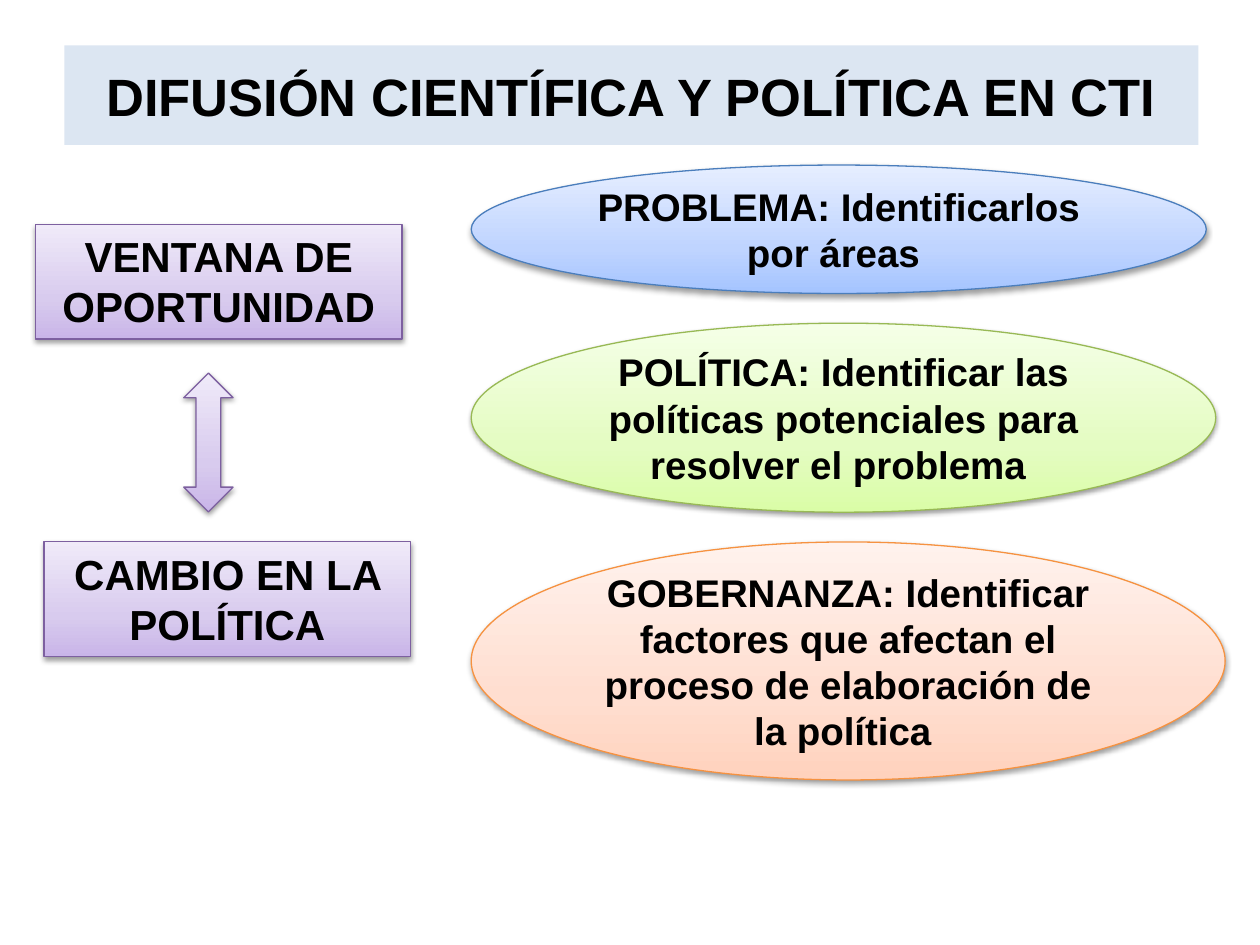
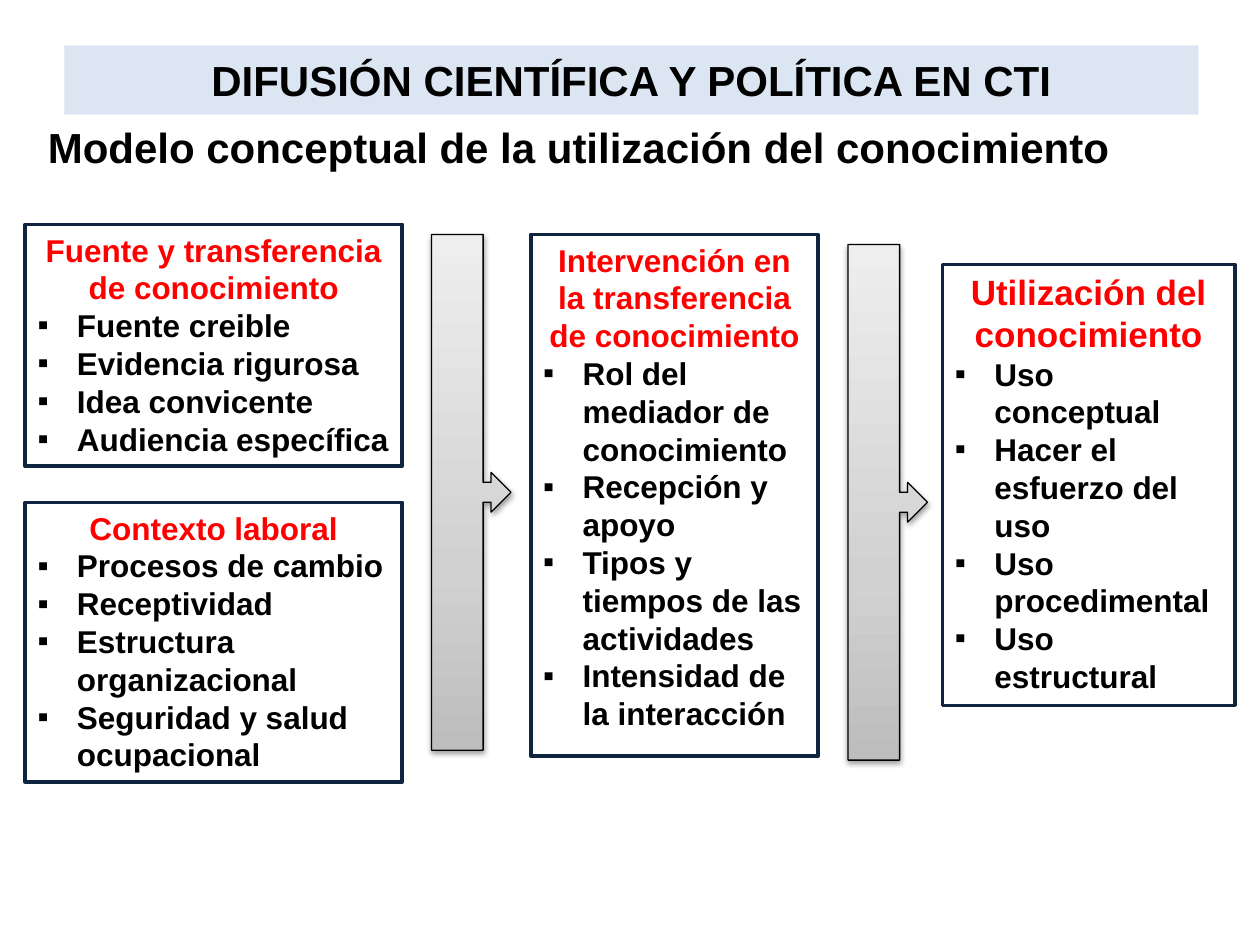
from copy import deepcopy

from lxml.etree import SubElement
from pptx import Presentation
from pptx.dml.color import RGBColor
from pptx.enum.shapes import MSO_SHAPE
from pptx.enum.text import MSO_ANCHOR, MSO_AUTO_SIZE, PP_ALIGN
from pptx.oxml.ns import qn
from pptx.util import Pt

BLACK = RGBColor(0x00, 0x00, 0x00)
WHITE = RGBColor(0xFF, 0xFF, 0xFF)
RED = RGBColor(0xFF, 0x00, 0x00)
NAVY = RGBColor(0x0F, 0x24, 0x3E)
BAND = RGBColor(0xDC, 0xE6, 0xF2)
PURPLE_LINE = RGBColor(0x7D, 0x60, 0xA0)
BLUE_LINE = RGBColor(0x4B, 0x7E, 0xBC)
GREEN_LINE = RGBColor(0x98, 0xB9, 0x55)
ORANGE_LINE = RGBColor(0xF6, 0x92, 0x40)
PURPLES = RGBColor(0xC9, 0xB5, 0xE8), RGBColor(0xD8, 0xCB, 0xEE), RGBColor(0xF0, 0xEA, 0xF9)
BLUES = RGBColor(0xA4, 0xC4, 0xFF), RGBColor(0xBF, 0xD4, 0xFF), RGBColor(0xE6, 0xEE, 0xFF)
GREENS = RGBColor(0xDA, 0xFD, 0xA7), RGBColor(0xE4, 0xFC, 0xC2), RGBColor(0xF5, 0xFF, 0xE7)
ORANGES = RGBColor(0xFF, 0xD2, 0xBD), RGBColor(0xFF, 0xDE, 0xD0), RGBColor(0xFF, 0xF2, 0xED)
GREYS = RGBColor(0xBD, 0xBD, 0xBD), RGBColor(0xD1, 0xD1, 0xD1), RGBColor(0xEE, 0xEE, 0xEE)

FONT = "Arial"
INDENT = 22.5
TITLE = "DIFUSIÓN CIENTÍFICA Y POLÍTICA EN CTI"
SUBTITLE = "Modelo conceptual de la utilización del conocimiento"

STAGES = [
    ("VENTANA DE OPORTUNIDAD", 20.2, 128.2),
    ("CAMBIO EN LA POLÍTICA", 25.2, 309.6),
]
STREAMS = [
    ("PROBLEMA: Identificarlos por áreas ", 73.4, BLUES, BLUE_LINE),
    ("POLÍTICA: Identificar las políticas potenciales para resolver el problema ", 108, GREENS, GREEN_LINE),
    ("GOBERNANZA: Identificar factores que afectan el proceso de elaboración de la política ",
     136, ORANGES, ORANGE_LINE),
]
STREAM_LEFT, STREAM_TOP, STREAM_GAP = 269.3, 94.3, 17
STREAM_WIDTH, STREAM_GROWTH = 420, 5.4

FACTORS = [
    ("Fuente y transferencia de conocimiento", 18, (14.4, 128.2, 215.5, 138.2),
     ["Fuente creible", "Evidencia rigurosa", "Idea convicente", "Audiencia específica"]),
    ("Contexto laboral", 18, (14.4, 287.1, 215.5, 159.8),
     ["Procesos de cambio", "Receptividad", "Estructura organizacional",
      "Seguridad y salud ocupacional"]),
    ("Intervención en la transferencia de conocimiento", 18, (303.3, 134, 164.2, 298),
     ["Rol del mediador de conocimiento", "Recepción y apoyo",
      "Tipos y tiempos de las actividades", "Intensidad de la interacción"]),
    ("Utilización del conocimiento", 20, (538.6, 151.1, 167, 252),
     ["Uso conceptual", "Hacer el esfuerzo del uso", "Uso procedimental", "Uso estructural"]),
]
CALLOUTS = [(246.6, 134), (484.6, 139.7)]


def style(p, size, color=BLACK, align=PP_ALIGN.CENTER):
    """Format every run of a paragraph."""
    p.alignment = align
    for r in p.runs:
        r.font.name, r.font.size, r.font.bold = FONT, Pt(size), True
        r.font.color.rgb = color


def add_bullet(p):
    """Give a paragraph a hanging square bullet."""
    pPr = p._p.get_or_add_pPr()
    pPr.set("marL", str(Pt(INDENT)))
    pPr.set("indent", str(-Pt(INDENT)))
    SubElement(pPr, qn("a:buFont"), typeface=FONT)
    SubElement(pPr, qn("a:buChar"), char="▪")


def add_shape(s, kind, box, line, weight):
    """Add an outlined preset shape without effects."""
    sp = s.shapes.add_shape(kind, *map(Pt, box))
    sp.shadow.inherit = False
    sp.line.color.rgb = line
    sp.line.width = Pt(weight)
    return sp


def add_glossy(s, kind, box, colors, line, text="", size=24, anchor=MSO_ANCHOR.MIDDLE):
    """Add a shape with a vertical gradient and a soft shadow below."""
    sp = add_shape(s, kind, box, line, 0.75)
    sp.fill.gradient()
    sp.fill.gradient_angle = 90
    stops = sp._element.spPr.find(".//" + qn("a:gsLst"))
    stops.append(deepcopy(stops[-1]))
    for stop, position, color in zip(sp.fill.gradient_stops, (0, 0.35, 1), colors):
        stop.position, stop.color.rgb = position, color
    effects = sp._element.spPr.find(qn("a:effectLst"))
    shadow = SubElement(effects, qn("a:outerShdw"), blurRad=str(Pt(3.1)), dist=str(Pt(1.6)),
                        dir="5400000", rotWithShape="0")
    SubElement(SubElement(shadow, qn("a:srgbClr"), val=str(BLACK)), qn("a:alpha"), val="38000")
    if text:
        tf = sp.text_frame
        tf.word_wrap, tf.vertical_anchor = True, anchor
        tf.text = text
        style(tf.paragraphs[0], size)


def add_factor(s, heading, size, box, items):
    """Add a framed box with a red heading and a bulleted list."""
    sp = add_shape(s, MSO_SHAPE.RECTANGLE, box, NAVY, 2)
    sp.fill.solid()
    sp.fill.fore_color.rgb = WHITE
    tf = sp.text_frame
    tf.word_wrap, tf.vertical_anchor = True, MSO_ANCHOR.TOP
    tf.text = heading
    style(tf.paragraphs[0], size, RED)
    for item in items:
        p = tf.add_paragraph()
        p.text = item
        add_bullet(p)
        style(p, 18, align=PP_ALIGN.LEFT)


def add_slide(prs, height, size):
    """Add a slide with the shared title band."""
    s = prs.slides.add_slide(prs.slide_layouts[5])
    sp = s.shapes.title
    sp.left, sp.top, sp.width, sp.height = map(Pt, (36.8, 26, 648, height))
    sp.fill.solid()
    sp.fill.fore_color.rgb = BAND
    tf = sp.text_frame
    tf.text = TITLE
    tf.auto_size, tf.vertical_anchor = MSO_AUTO_SIZE.NONE, MSO_ANCHOR.MIDDLE
    style(tf.paragraphs[0], size)
    return s


def add_policy_slide(prs):
    """Build the slide on the policy window and its three streams."""
    s = add_slide(prs, 56.9, 30)
    for text, left, top in STAGES:
        add_glossy(s, MSO_SHAPE.RECTANGLE, (left, top, 209.5, 65.5), PURPLES, PURPLE_LINE,
                   text, anchor=MSO_ANCHOR.TOP)
    add_glossy(s, MSO_SHAPE.UP_DOWN_ARROW, (105, 213.2, 28.2, 79.3), PURPLES, PURPLE_LINE)
    top = STREAM_TOP
    for i, (text, height, colors, line) in enumerate(STREAMS):
        box = STREAM_LEFT, top, STREAM_WIDTH + i * STREAM_GROWTH, height
        add_glossy(s, MSO_SHAPE.OVAL, box, colors, line, text, 22)
        top += height + STREAM_GAP


def add_model_slide(prs):
    """Build the slide on the knowledge use model."""
    s = add_slide(prs, 39.6, 24)
    tf = s.shapes.add_textbox(*map(Pt, (20.2, 66.2, 627, 36))).text_frame
    tf.word_wrap = False
    tf.text = SUBTITLE
    style(tf.paragraphs[0], 24, align=PP_ALIGN.LEFT)
    for factor in FACTORS:
        add_factor(s, *factor)
    for left, top in CALLOUTS:
        add_glossy(s, MSO_SHAPE.RIGHT_ARROW_CALLOUT, (left, top, 45.4, 294.7), GREYS, BLACK)


def main():
    """Build and save the presentation."""
    prs = Presentation()
    prs.slide_width, prs.slide_height = Pt(720), Pt(540)
    add_policy_slide(prs)
    add_model_slide(prs)
    prs.save("out.pptx")


if __name__ == "__main__":
    main()
